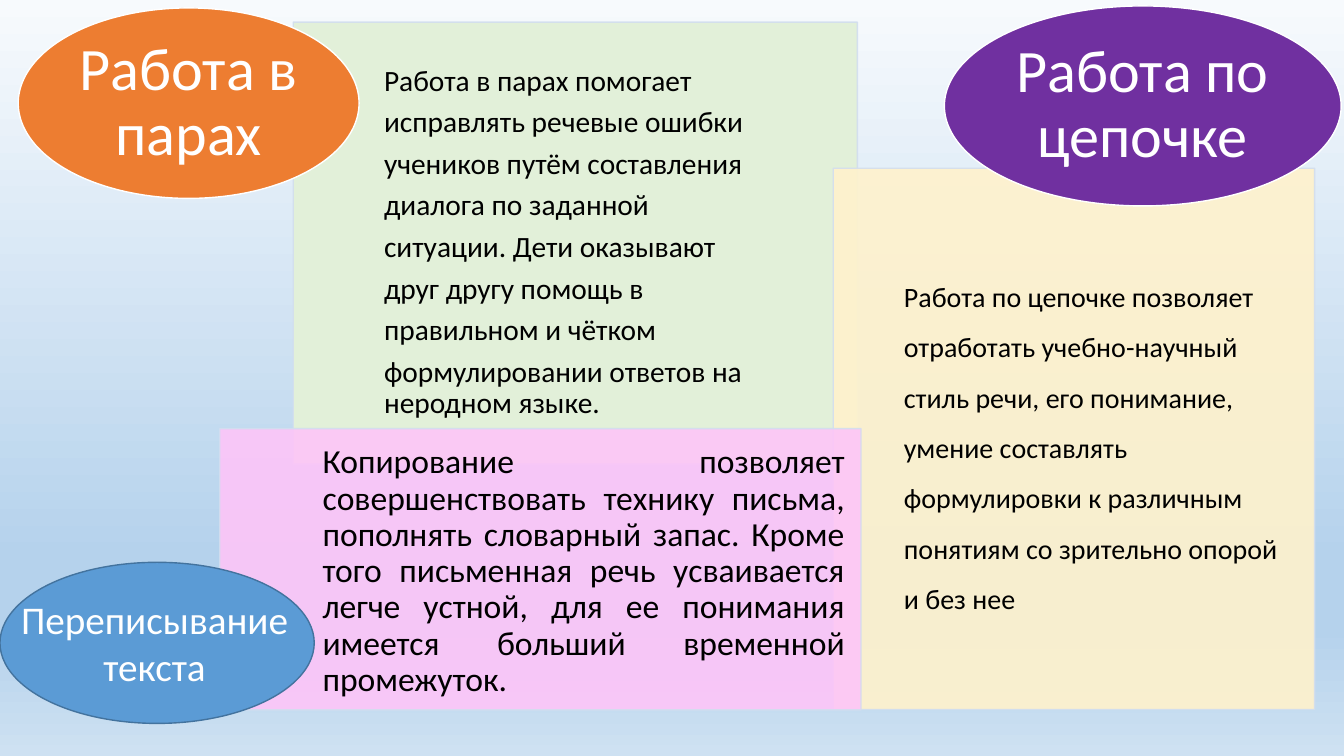
from copy import deepcopy

from pptx import Presentation
from pptx.dml.color import RGBColor
from pptx.enum.shapes import MSO_SHAPE as Geometry
from pptx.enum.text import MSO_ANCHOR as Anchor, PP_ALIGN as Align
from pptx.oxml.ns import qn
from pptx.oxml.xmlchemy import OxmlElement
from pptx.util import Cm, Pt

COLORS = {
    "green": "E2F0D9", "orange": "ED7D31", "cream": "FFF2CC",
    "purple": "7030A0", "pink": "FDC5F8", "blue": "5B9BD5",
    "blue_edge": "43739E", "pale_edge": "D2DEEF",
    "white": "FFFFFF", "black": "000000",
    "sky_top": "F7FAFD", "sky_mid": "B5D2EC", "sky_low": "CEE1F2",
}
SKY = [(0, "sky_top"), (0.74, "sky_mid"), (0.83, "sky_mid"), (1, "sky_low")]

PAIRS_TEXT = [
    "Работа в парах помогает",
    "исправлять речевые ошибки",
    "учеников путём составления",
    "диалога по заданной",
    "ситуации. Дети оказывают",
    "друг другу помощь в",
    "правильном и чётком",
    "формулировании ответов на неродном языке.",
]
CHAIN_TEXT = [
    "Работа по цепочке позволяет отработать учебно-научный стиль речи, "
    "его понимание, умение составлять формулировки к различным понятиям "
    "со зрительно опорой и без нее"
]
COPYING_TEXT = [
    "Копирование позволяет совершенствовать технику письма, пополнять "
    "словарный запас. Кроме того письменная речь усваивается легче устной, "
    "для ее понимания имеется больший временной промежуток."
]

CARD = {"geometry": Geometry.RECTANGLE, "edge": "pale_edge", "edge_alpha": 90,
        "ink": "black", "align": Align.LEFT, "padding": 0.41}
BUBBLE = {"geometry": Geometry.OVAL, "edge": "white", "ink": "white",
          "align": Align.CENTER, "padding": 0, "size": 43}

PARTS = [
    {**CARD, "box": (7.39, 0.56, 14.22, 11.13), "fill": "green",
     "text": PAIRS_TEXT, "size": 21, "indent": 2.29},
    {**BUBBLE, "box": (0.46, 0.2, 8.59, 4.8), "fill": "orange",
     "text": ["Работа в парах"]},
    {**CARD, "box": (21, 4.24, 12.13, 13.64), "fill": "cream", "fill_alpha": 90,
     "text": CHAIN_TEXT, "size": 20, "indent": 1.78, "spacing": 1.5},
    {**BUBBLE, "box": (23.8, 0.15, 10, 5.04), "fill": "purple",
     "text": ["Работа по цепочке"]},
    {**CARD, "box": (5.54, 10.8, 16.16, 7.09), "fill": "pink", "fill_alpha": 90,
     "text": COPYING_TEXT, "size": 24, "indent": 2.59,
     "align": Align.JUSTIFY, "anchor": Anchor.TOP},
    {**BUBBLE, "box": (0, 14.17, 7.92, 4.06), "fill": "blue",
     "edge": "blue_edge", "text": []},
    {"box": (0, 14.88, 7.67, 2.64), "text": ["Переписывание текста"],
     "size": 28, "ink": "white", "align": Align.CENTER, "padding": 0.13,
     "indent": 0.25, "spacing": 1, "anchor": Anchor.TOP},
]


def rgb(name):
    return RGBColor.from_string(COLORS[name])


def paint(fill, color, opacity):
    fill.solid()
    fill.fore_color.rgb = rgb(color)
    if opacity < 100:
        alpha = OxmlElement("a:alpha")
        alpha.set("val", str(opacity * 1000))
        fill._xPr.find(qn("a:solidFill"))[0].append(alpha)


def paint_sky(slide):
    fill = slide.background.fill
    fill.gradient()
    fill.gradient_angle = 270
    stop_list = next(slide._element.iter(qn("a:gsLst")))
    while len(stop_list) < len(SKY):
        stop_list.append(deepcopy(stop_list[0]))
    for stop, (position, color) in zip(fill.gradient_stops, SKY):
        stop.position = position
        stop.color.rgb = rgb(color)


def write_text(frame, part):
    padding = part["padding"]
    layout = {
        "word_wrap": True,
        "vertical_anchor": part.get("anchor", Anchor.MIDDLE),
        "margin_left": Cm(part.get("indent", padding)),
        "margin_right": Cm(padding),
        "margin_top": Cm(padding),
        "margin_bottom": Cm(padding),
    }
    for name, value in layout.items():
        setattr(frame, name, value)
    style = {
        "alignment": part["align"],
        "line_spacing": part.get("spacing", 0.9),
        "space_after": Pt(round(part["size"] * 0.35)),
    }
    font = {"name": "Calibri", "size": Pt(part["size"])}
    for index, line in enumerate(part["text"]):
        paragraph = frame.add_paragraph() if index else frame.paragraphs[0]
        for name, value in style.items():
            setattr(paragraph, name, value)
        run = paragraph.add_run()
        run.text = line
        for name, value in font.items():
            setattr(run.font, name, value)
        run.font.color.rgb = rgb(part["ink"])


def add_part(slide, part):
    box = [Cm(length) for length in part["box"]]
    if "geometry" in part:
        shape = slide.shapes.add_shape(part["geometry"], *box)
        shape.shadow.inherit = False
        paint(shape.fill, part["fill"], part.get("fill_alpha", 100))
        paint(shape.line.fill, part["edge"], part.get("edge_alpha", 100))
        shape.line.width = Pt(1)
    else:
        shape = slide.shapes.add_textbox(*box)
    write_text(shape.text_frame, part)


def main():
    deck = Presentation()
    deck.slide_width, deck.slide_height = Cm(33.87), Cm(19.05)
    slide = deck.slides.add_slide(deck.slide_layouts[6])
    paint_sky(slide)
    for part in PARTS:
        add_part(slide, part)
    deck.save("out.pptx")


if __name__ == "__main__":
    main()
